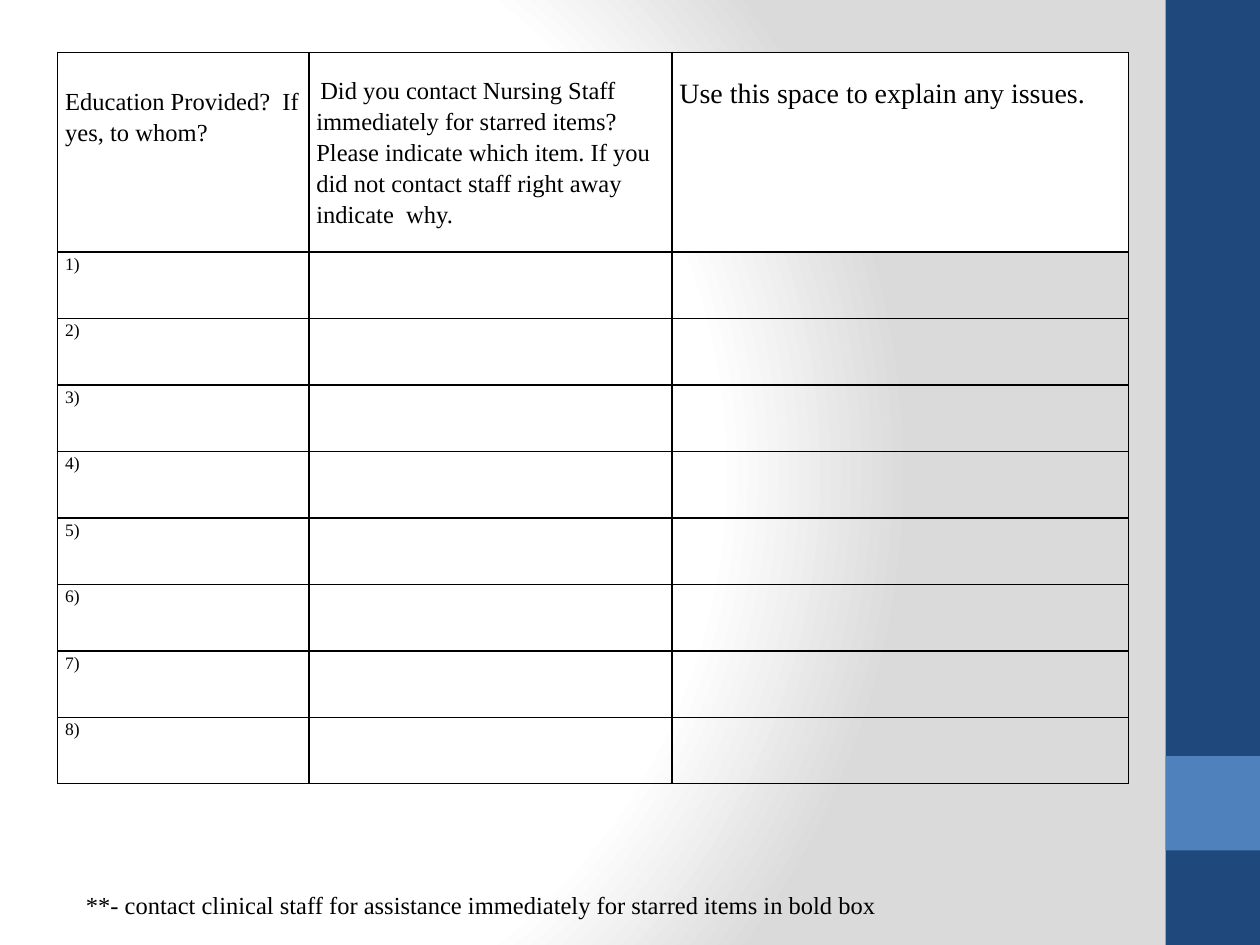
from lxml import etree
from pptx import Presentation
from pptx.dml.color import RGBColor
from pptx.enum.shapes import MSO_SHAPE
from pptx.oxml import parse_xml
from pptx.oxml.ns import nsdecls, qn
from pptx.util import Pt

BLACK = RGBColor(0, 0, 0)
WHITE = RGBColor(0xFF, 0xFF, 0xFF)
NAVY = RGBColor(0x1F, 0x49, 0x7D)
BLUE = RGBColor(0x4F, 0x81, 0xBD)
GREY = RGBColor(0xDA, 0xDA, 0xDA)
FONT = "Times New Roman"

SLIDE_W, SLIDE_H = 720, 540
BAND_W = 54
COL_WIDTHS = (143.5, 207.5, 261)
HEADER_H, ROW_H = 114, 38
ITEM_COUNT = 8
# text, size, space above, first-line indent
HEADERS = (
    ("Education Provided?  If yes, to whom?", 14, 18.5, 0),
    ("Did you contact Nursing Staff immediately for starred items? "
     "Please indicate which item. If you did not contact staff right away "
     "indicate  why.", 14, 12, 2.25),
    ("Use this space to explain any issues.", 16, 12, 0),
)
FOOTNOTE = ("**- contact clinical staff for assistance immediately "
            "for starred items in bold box")


def set_background(slide):
    """Radial gradient, white in the middle and grey outside."""
    stops = "".join(
        f'<a:gs pos="{pos * 1000}"><a:srgbClr val="{color}"/></a:gs>'
        for pos, color in ((0, WHITE), (75, WHITE), (100, GREY)))
    bg = parse_xml(
        f'<p:bg {nsdecls("p", "a")}><p:bgPr><a:gradFill rotWithShape="1">'
        f'<a:gsLst>{stops}</a:gsLst><a:path path="circle">'
        '<a:fillToRect l="20000" t="50000" r="100000" b="50000"/></a:path>'
        '</a:gradFill><a:effectLst/></p:bgPr></p:bg>')
    slide.element.cSld.insert(0, bg)


def add_side_band(slide, x, y, w, h):
    for top, height, color in ((y, h, NAVY), (y + h - 2 * w, w, BLUE)):
        s = slide.shapes.add_shape(
            MSO_SHAPE.RECTANGLE, Pt(x), Pt(top), Pt(w), Pt(height))
        s.shadow.inherit = False
        s.fill.solid()
        s.fill.fore_color.rgb = color
        s.line.fill.background()


def write(tf, text, size):
    tf.text = text
    p = tf.paragraphs[0]
    p.line_spacing = 1.15
    font = p.runs[0].font
    font.name, font.size, font.color.rgb = FONT, Pt(size), BLACK
    return p


def add_borders(cell):
    tc_pr = cell._tc.get_or_add_tcPr()
    for side in ("lnL", "lnR", "lnT", "lnB"):
        ln = etree.SubElement(tc_pr, qn(f"a:{side}"), w=str(Pt(1)))
        fill = etree.SubElement(ln, qn("a:solidFill"))
        etree.SubElement(fill, qn("a:srgbClr"), val=str(BLACK))


def add_checklist(slide, x, y):
    rows = ITEM_COUNT + 1
    table = slide.shapes.add_table(
        rows, len(COL_WIDTHS), Pt(x), Pt(y), Pt(sum(COL_WIDTHS)),
        Pt(HEADER_H + ITEM_COUNT * ROW_H)).table
    table.first_row = table.horz_banding = False
    for col, width in zip(table.columns, COL_WIDTHS):
        col.width = Pt(width)
    for i, row in enumerate(table.rows):
        row.height = Pt(ROW_H if i else HEADER_H)
        for cell in row.cells:
            cell.margin_left = cell.margin_right = Pt(4.3)
            cell.margin_top = cell.margin_bottom = 0
            add_borders(cell)
            if i:
                cell.fill.background()
            else:
                cell.fill.solid()
                cell.fill.fore_color.rgb = WHITE

    for cell, (text, size, above, indent) in zip(table.rows[0].cells, HEADERS):
        cell.margin_top = Pt(above)
        p = write(cell.text_frame, text, size)
        p._p.get_or_add_pPr().set("indent", str(Pt(indent)))
    for i in range(1, rows):
        write(table.cell(i, 0).text_frame, f"{i})", 10)


def add_footnote(slide, x, y, w, h):
    tf = slide.shapes.add_textbox(Pt(x), Pt(y), Pt(w), Pt(h)).text_frame
    tf.word_wrap = True
    write(tf, FOOTNOTE, 14).space_after = Pt(10)


def main():
    prs = Presentation()
    prs.slide_width, prs.slide_height = Pt(SLIDE_W), Pt(SLIDE_H)
    slide = prs.slides.add_slide(prs.slide_layouts[6])
    set_background(slide)
    add_side_band(slide, SLIDE_W - BAND_W, 0, BAND_W, SLIDE_H)
    add_checklist(slide, 33, 30)
    add_footnote(slide, 42, 502.5, 594, 25)
    prs.save("out.pptx")


if __name__ == "__main__":
    main()
